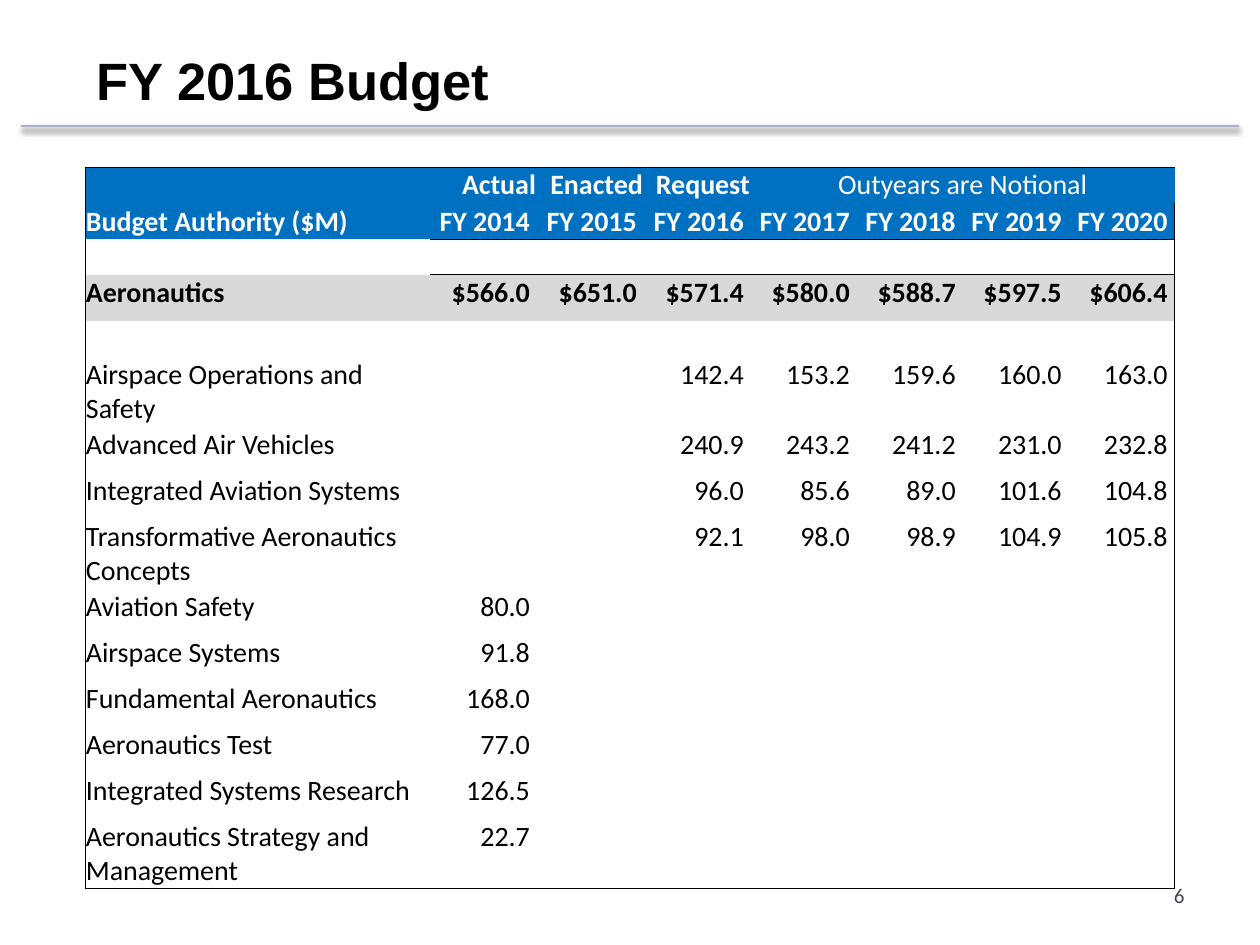
import dataclasses

import pptx
import pptx.dml.color
import pptx.enum.shapes
import pptx.enum.text
import pptx.oxml.ns
import pptx.util
from lxml import etree

PX = 914400 // 126
ALIGN = pptx.enum.text.PP_ALIGN
ANCHOR = pptx.enum.text.MSO_ANCHOR
qn = pptx.oxml.ns.qn


@dataclasses.dataclass
class Theme:
    title_font: str = "Arial"
    body_font: str = "Calibri"
    title_size: int = 30
    body_size: int = 16
    number_size: int = 12
    ink: str = "000000"
    header_text: str = "FFFFFF"
    header_fill: str = "0070C0"
    total_fill: str = "D9D9D9"
    row_fill: str = "FFFFFF"
    rule: str = "AAB0C8"
    page_number: str = "464653"


theme = Theme()


def add_run(paragraph, text, font, size, color, bold=False):
    run = paragraph.add_run()
    run.text = text
    run.font.name = font
    run.font.size = pptx.util.Pt(size)
    run.font.bold = bold
    run.font.color.rgb = pptx.dml.color.RGBColor.from_string(color)


def set_borders(cell, sides):
    """Draw thin lines on the given sides, a subset of "LRTB"."""
    properties = cell._tc.get_or_add_tcPr()
    for position, side in enumerate(sides):
        line = etree.Element(qn(f"a:ln{side}"), w=str(pptx.util.Pt(0.5)))
        fill = etree.SubElement(line, qn("a:solidFill"))
        etree.SubElement(fill, qn("a:srgbClr"), val=theme.ink)
        properties.insert(position, line)


prs = pptx.Presentation()
prs.slide_width = 1260 * PX
prs.slide_height = 945 * PX
slide = prs.slides.add_slide(prs.slide_layouts[6])

# Rule under the title, with a soft shadow
rule = slide.shapes.add_connector(
    pptx.enum.shapes.MSO_CONNECTOR.STRAIGHT, 21 * PX, 126 * PX, 1239 * PX, 126 * PX)
rule.line.color.rgb = pptx.dml.color.RGBColor.from_string(theme.rule)
rule.line.width = pptx.util.Pt(1.5)
effects = etree.SubElement(rule._element.spPr, qn("a:effectLst"))
shadow = etree.SubElement(
    effects, qn("a:outerShdw"), blurRad=str(pptx.util.Pt(3)),
    dist=str(pptx.util.Pt(2)), dir="5400000", rotWithShape="0")
shadow_color = etree.SubElement(shadow, qn("a:srgbClr"), val=theme.ink)
etree.SubElement(shadow_color, qn("a:alpha"), val="40000")

# Title
title = slide.shapes.add_textbox(84 * PX, 23 * PX, 1018 * PX, 113 * PX).text_frame
title.word_wrap = True
title.vertical_anchor = ANCHOR.MIDDLE
add_run(title.paragraphs[0], "FY 2016 Budget", theme.title_font,
        theme.title_size, theme.ink, bold=True)

# Budget table: each row is its label, then the years from FY 2014 on
budget = [
    ["", "Actual", "Enacted", "Request", "Outyears are Notional"],
    ["Budget Authority ($M)"] + [f"FY {year}" for year in range(2014, 2021)],
    [],
    ["Aeronautics", "$566.0", "$651.0", "$571.4", "$580.0", "$588.7", "$597.5", "$606.4"],
    [],
    ["Airspace Operations and Safety", "", "", "142.4", "153.2", "159.6", "160.0", "163.0"],
    ["Advanced Air Vehicles", "", "", "240.9", "243.2", "241.2", "231.0", "232.8"],
    ["Integrated Aviation Systems", "", "", "96.0", "85.6", "89.0", "101.6", "104.8"],
    ["Transformative Aeronautics Concepts", "", "", "92.1", "98.0", "98.9", "104.9", "105.8"],
    ["Aviation Safety", "80.0"],
    ["Airspace Systems", "91.8"],
    ["Fundamental Aeronautics", "168.0"],
    ["Aeronautics Test", "77.0"],
    ["Integrated Systems Research", "126.5"],
    ["Aeronautics Strategy and Management", "22.7"],
]
HEADER_ROWS, TOTAL_ROW, OUTYEARS = 2, 3, 4
column_widths = [345] + [107] * 3 + [106] * 4
two_line_rows = (5, 8, 14)
row_heights = [36 if row in (0, 1, 2, 4) else 70 if row in two_line_rows else 46
               for row in range(len(budget))]
last_row, last_column = len(budget) - 1, len(column_widths) - 1

frame = slide.shapes.add_table(
    len(budget), len(column_widths), 85 * PX, 167 * PX,
    sum(column_widths) * PX, sum(row_heights) * PX)
table = frame.table
table.first_row = False
table.horz_banding = False
# The built-in style without fills or grid
table._tbl.tblPr.find(qn("a:tableStyleId")).text = "{2D5ABB26-0587-4C30-8999-92F81FD0307C}"
for column, width in zip(table.columns, column_widths):
    column.width = width * PX

for r, (entries, height) in enumerate(zip(budget, row_heights)):
    table.rows[r].height = height * PX
    is_header = r < HEADER_ROWS
    if is_header:
        row_fill = theme.header_fill
    else:
        row_fill = theme.total_fill if r == TOTAL_ROW else theme.row_fill
    for c in range(len(column_widths)):
        cell = table.cell(r, c)
        is_outyears = r == 0 and c == OUTYEARS
        cell.fill.solid()
        cell.fill.fore_color.rgb = pptx.dml.color.RGBColor.from_string(row_fill)
        cell.margin_left = cell.margin_top = PX
        cell.margin_bottom = 0
        cell.margin_right = 7 * PX if r and c else PX
        cell.vertical_anchor = ANCHOR.BOTTOM if r == 1 else ANCHOR.TOP

        sides = "L" if c == 0 else "R" if c == last_column else ""
        if r == 0 or (r == 2 and c):
            sides += "T"
        if r == last_row or (r == 1 and c):
            sides += "B"
        set_borders(cell, sides)

        paragraph = cell.text_frame.paragraphs[0]
        text = entries[c] if c < len(entries) else ""
        if text:
            paragraph.alignment = (ALIGN.CENTER if is_outyears
                                   else ALIGN.RIGHT if c else ALIGN.LEFT)
            add_run(paragraph, text, theme.body_font, theme.body_size,
                    theme.header_text if is_header else theme.ink,
                    bold=(is_header or r == TOTAL_ROW) and not is_outyears)
        else:
            # Keeps an empty cell from growing to the default type size
            etree.SubElement(paragraph._p, qn("a:endParaRPr"), sz=str(theme.body_size * 100))

table.cell(0, OUTYEARS).merge(table.cell(0, last_column))

# Page number
number = slide.shapes.add_textbox(924 * PX, 876 * PX, 273 * PX, 50 * PX).text_frame
number.word_wrap = True
number.paragraphs[0].alignment = ALIGN.RIGHT
add_run(number.paragraphs[0], "6", theme.body_font, theme.number_size, theme.page_number)

prs.save("out.pptx")
